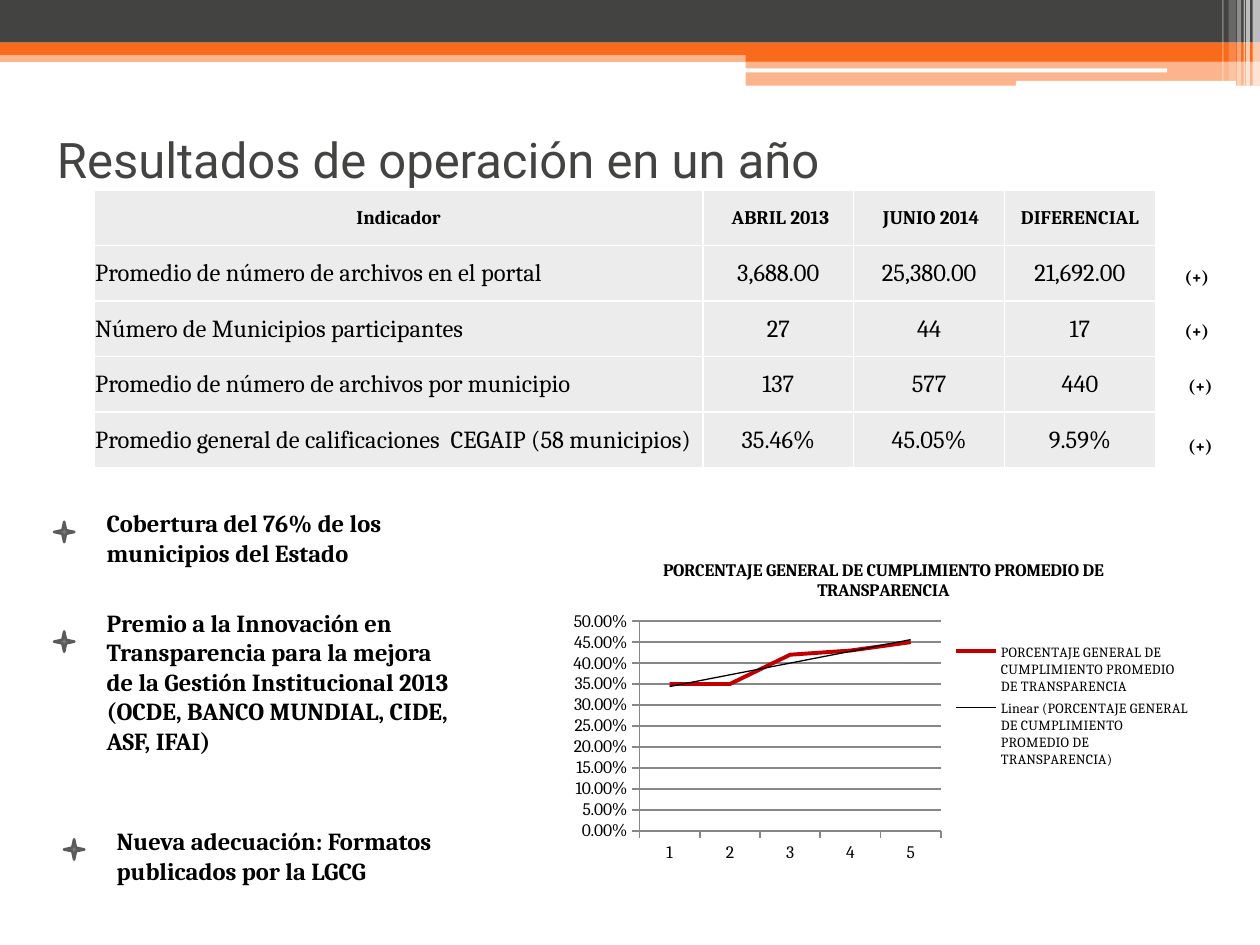
from lxml import etree
from pptx import Presentation
from pptx import util as u
from pptx.chart import data as chart_data
from pptx.dml.color import RGBColor
from pptx.enum import chart as charts, shapes, text
from pptx.oxml import parse_xml
from pptx.oxml import ns

ORANGE = RGBColor(0xF9, 0x6A, 0x1B)
CHARCOAL = RGBColor(0x43, 0x43, 0x42)
WHITE = RGBColor(0xFF, 0xFF, 0xFF)
BLACK = RGBColor(0, 0, 0)
CELL_GRAY = RGBColor(0xEC, 0xEC, 0xEC)
GRID_GRAY = RGBColor(0x87, 0x87, 0x87)
STAR_FILL = RGBColor(0x79, 0x7B, 0x7E)
STAR_LINE = RGBColor(0x5A, 0x5B, 0x5D)
RED = RGBColor(0xC0, 0, 0)

deck = Presentation()
deck.slide_width, deck.slide_height = u.Cm(25.4), u.Cm(19.05)
page = deck.slides.add_slide(deck.slide_layouts[6])


def add_figure(kind, left, top, width, height, color, opacity=100):
    figure = page.shapes.add_shape(kind, u.Cm(left), u.Cm(top), u.Cm(width), u.Cm(height))
    figure.shadow.inherit = False
    figure.fill.solid()
    figure.fill.fore_color.rgb = color
    figure.line.fill.background()
    if opacity < 100:
        tint = figure.fill._xPr.find(".//" + ns.qn("a:srgbClr"))
        etree.SubElement(tint, ns.qn("a:alpha")).set("val", str(opacity * 1000))
    return figure


def add_text(left, top, width, height, words, size, font="Cambria", color=BLACK, bold=True):
    box = page.shapes.add_textbox(u.Cm(left), u.Cm(top), u.Cm(width), u.Cm(height))
    box.text_frame.word_wrap = True
    span = box.text_frame.paragraphs[0].add_run()
    span.text = words
    span.font.size, span.font.name, span.font.bold = u.Pt(size), font, bold
    span.font.color.rgb = color
    return box


RECT = shapes.MSO_SHAPE.RECTANGLE
ROUND = shapes.MSO_SHAPE.ROUNDED_RECTANGLE
for kind, left, top, width, height, color, opacity in [
    (RECT, 0, 1.02, 25.4, 0.23, ORANGE, 50),
    (RECT, 0, 0, 25.4, 0.86, CHARCOAL, 100),
    (RECT, 0, 0.86, 25.4, 0.25, ORANGE, 100),
    (RECT, 15.03, 0.99, 10.37, 0.25, ORANGE, 100),
    (RECT, 15.03, 1.23, 10.37, 0.5, ORANGE, 50),
    (ROUND, 15.02, 1.38, 8.51, 0.08, WHITE, 100),
    (ROUND, 20.48, 1.63, 4.44, 0.1, WHITE, 100),
]:
    add_figure(kind, left, top, width, height, color, opacity)

for left, width, height, opacity in [
    (25.25, 0.15, 1.73, 65), (25.12, 0.08, 1.73, 65), (25.07, 0.03, 1.73, 60),
    (24.94, 0.08, 1.73, 40), (24.77, 0.15, 1.63, 20), (24.64, 0.03, 1.63, 30),
]:
    add_figure(RECT, left, 0, width, height, WHITE, opacity)

title = add_text(0.9, 1.72, 22.86, 2.96, "Resultados de operación en un año", 28, "Roboto", CHARCOAL, False)
title.text_frame.vertical_anchor = text.MSO_ANCHOR.MIDDLE

rows = [
    ("Indicador", " ABRIL 2013", " JUNIO 2014", "DIFERENCIAL"),
    ("Promedio de número de archivos en el portal", "3,688.00", "25,380.00", "21,692.00"),
    ("Número de Municipios participantes", "27", "44", "17"),
    ("Promedio de número de archivos por municipio", "137", "577", "440"),
    ("Promedio general de calificaciones  CEGAIP (58 municipios)", "35.46%", "45.05%", "9.59%"),
]
table = page.shapes.add_table(5, 4, u.Cm(1.9), u.Cm(3.83), u.Cm(21.39), u.Cm(5.6)).table
for column, width in zip(table.columns, (12.27, 3.04, 3.04, 3.04)):
    column.width = u.Cm(width)
for r, row in enumerate(rows):
    table.rows[r].height = u.Cm(1.12)
    for c, words in enumerate(row):
        cell = table.cell(r, c)
        cell.margin_left = cell.margin_right = cell.margin_top = u.Cm(0.02)
        cell.margin_bottom = 0
        cell.vertical_anchor = text.MSO_ANCHOR.MIDDLE
        for side in ("lnL", "lnR", "lnT", "lnB"):
            cell._tc.get_or_add_tcPr().append(parse_xml(
                f'<a:{side} {ns.nsdecls("a")} w="12700"><a:solidFill>'
                f'<a:srgbClr val="{WHITE}"/></a:solidFill></a:{side}>'))
        cell.fill.solid()
        cell.fill.fore_color.rgb = CELL_GRAY
        para = cell.text_frame.paragraphs[0]
        para.alignment = text.PP_ALIGN.LEFT if r and not c else text.PP_ALIGN.CENTER
        span = para.add_run()
        span.text = words
        span.font.name, span.font.bold = "Cambria", r == 0
        span.font.size = u.Pt(14 if r else 11)
        span.font.color.rgb = BLACK

for left, top in [(23.63, 5.23), (23.63, 6.32), (23.7, 7.44), (23.7, 8.64)]:
    add_text(left, top, 1.27, 0.69, "(+)", 10)

for left, top, width, height, star_top, words in [
    (1.9, 10.12, 7.19, 1.45, 10.52, "Cobertura del 76% de los municipios del Estado"),
    (1.9, 12.13, 7.49, 3.84, 12.73,
     "Premio a la Innovación en Transparencia para la mejora de la Gestión "
     "Institucional 2013 (OCDE, BANCO MUNDIAL, CIDE, ASF, IFAI)"),
    (2.1, 16.53, 7.8, 2.06, 16.92, "Nueva adecuación: Formatos publicados por la LGCG"),
]:
    add_text(left, top, width, height, words, 14)
    star = add_figure(shapes.MSO_SHAPE.STAR_4_POINT, left - 0.81, star_top, 0.41, 0.41, STAR_FILL)
    star.line.color.rgb = STAR_LINE
    star.line.width = u.Pt(1.5)

heading = "PORCENTAJE GENERAL DE CUMPLIMIENTO PROMEDIO DE TRANSPARENCIA"
figures = chart_data.CategoryChartData(number_format="0.00%")
figures.categories = ["1", "2", "3", "4", "5"]
figures.add_series(heading, (0.35, 0.35, 0.42, 0.43, 0.45))
chart = page.shapes.add_chart(
    charts.XL_CHART_TYPE.LINE, u.Cm(11.34), u.Cm(10.94), u.Cm(12.93), u.Cm(6.6), figures).chart
chart.font.name, chart.font.size = "Cambria", u.Pt(10)
chart.font.color.rgb = BLACK
chart.has_title = True
span = chart.chart_title.text_frame.paragraphs[0].add_run()
span.text = heading
span.font.name, span.font.size, span.font.bold = "Cambria", u.Pt(10), True
span.font.color.rgb = BLACK
chart.has_legend = True
chart.legend.position = charts.XL_LEGEND_POSITION.RIGHT
chart.legend.include_in_layout = False
chart.legend.font.size = u.Pt(8)
chart.legend.font.name = "Cambria"
chart.legend.font.color.rgb = BLACK

values = chart.value_axis
values.minimum_scale, values.maximum_scale, values.major_unit = 0, 0.5, 0.05
values.tick_labels.number_format = "0.00%"
values.tick_labels.number_format_is_linked = False
values.has_major_gridlines = True
for line in (values.major_gridlines.format.line, values.format.line, chart.category_axis.format.line):
    line.color.rgb = GRID_GRAY
    line.width = u.Pt(1)
for axis in (values, chart.category_axis):
    axis.major_tick_mark = charts.XL_TICK_MARK.OUTSIDE

chart.plots[0].vary_by_categories = False
series = chart.plots[0].series[0]
series.smooth = False
series.marker.style = charts.XL_MARKER_STYLE.NONE
series.format.line.color.rgb = RED
series.format.line.width = u.Pt(2.25)
series._element.find(ns.qn("c:cat")).addprevious(parse_xml(
    f'<c:trendline {ns.nsdecls("c", "a")}><c:spPr><a:ln w="9525"><a:solidFill>'
    f'<a:srgbClr val="{BLACK}"/></a:solidFill></a:ln></c:spPr>'
    '<c:trendlineType val="linear"/><c:dispRSqr val="0"/><c:dispEq val="0"/></c:trendline>'))

plot_area = chart._chartSpace.find(".//" + ns.qn("c:plotArea"))
for layout in plot_area.findall(ns.qn("c:layout")):
    plot_area.remove(layout)
plot_area.insert(0, parse_xml(
    f'<c:layout {ns.nsdecls("c")}><c:manualLayout><c:layoutTarget val="inner"/>'
    '<c:xMode val="edge"/><c:yMode val="edge"/><c:x val="0.12"/><c:y val="0.24"/>'
    '<c:w val="0.47"/><c:h val="0.64"/></c:manualLayout></c:layout>'))

deck.save("out.pptx")
